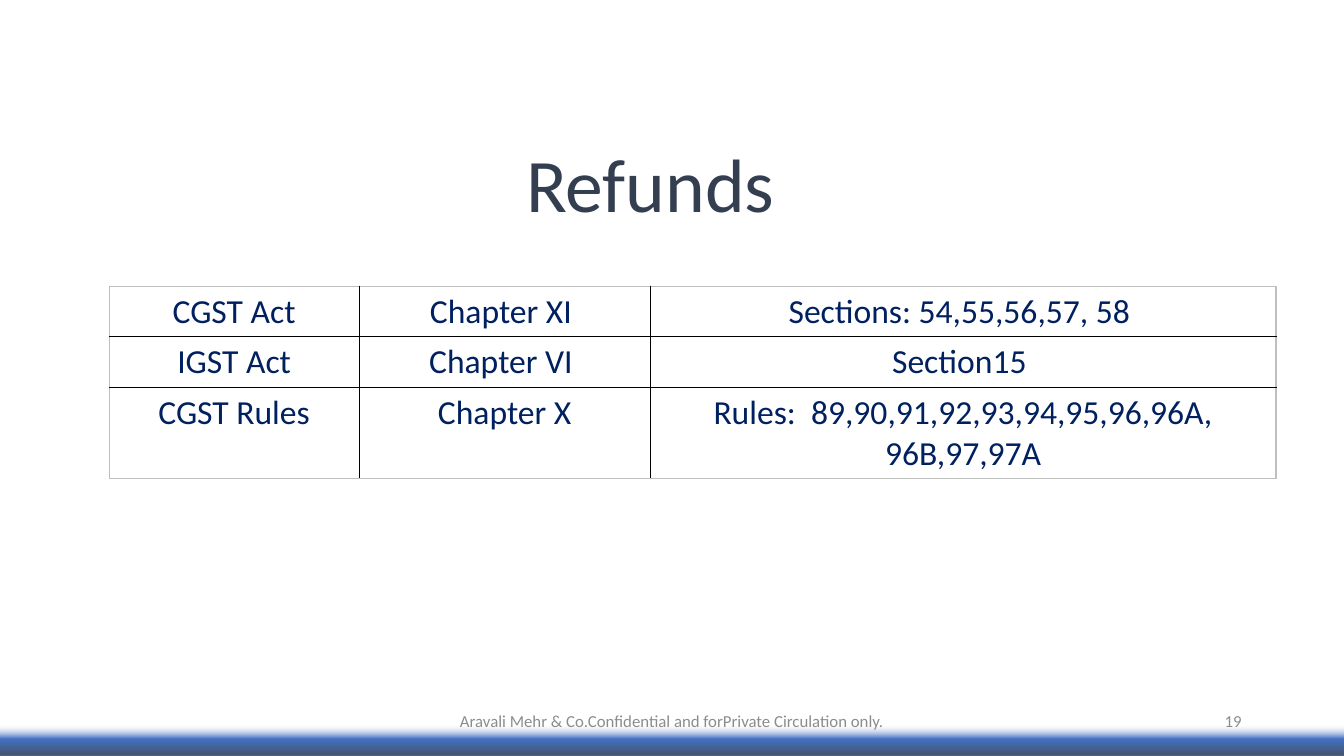
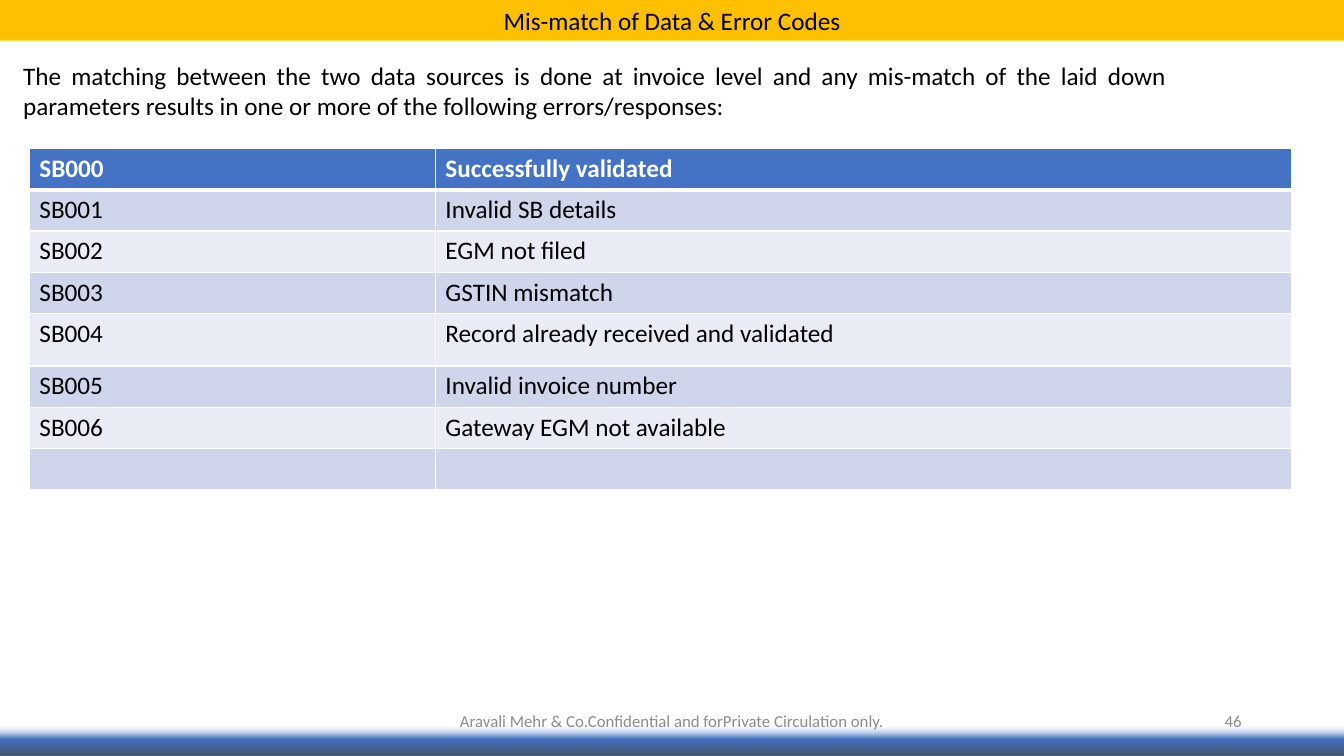
from pptx import Presentation
from pptx.dml import color
from pptx.enum import shapes, text
from pptx.oxml import ns, parse_xml
from pptx.util import Pt

PX = 6350
WIDTH, HEIGHT = 1920, 1080
FONT = "Calibri"
BLACK, WHITE, GREY = "000000", "FFFFFF", "8C8C8C"
SLATE, NAVY, AMBER = "333F50", "002060", "FFC000"
BLUE, PALE_BLUE, PALEST_BLUE = "4472C4", "CFD5EA", "E9EBF5"
OUTLINE = "BFBFBF"
BAND_STOPS = [(11, "E0E5F7", 0), (50, BLUE, 100), (100, "44546A", 100)]
FOOTER = "Aravali Mehr & Co.Confidential and forPrivate Circulation only."
ALIGN = text.PP_ALIGN
ANCHOR = text.MSO_ANCHOR

REFUND_RULES = [
    ("CGST Act", "Chapter XI ", "Sections: 54,55,56,57, 58 "),
    ("IGST Act", "Chapter VI ", "Section15 "),
    ("CGST Rules", "Chapter X", "Rules:  89,90,91,92,93,94,95,96,96A, 96B,97,97A"),
]
ERROR_CODES = [
    ("SB000", "Successfully validated"),
    ("SB001", "Invalid SB details"),
    ("SB002", "EGM not filed"),
    ("SB003", "GSTIN mismatch"),
    ("SB004", "Record already received and validated"),
    ("SB005", "Invalid invoice number"),
    ("SB006", "Gateway EGM not available"),
    ("", ""),
]


def rgb(value):
    """Return the colour for a hex string."""
    return color.RGBColor.from_string(value)


def px(*lengths):
    """Convert pixel lengths to EMU."""
    return [length * PX for length in lengths]


def write(frame, words, size, colour, align=ALIGN.LEFT, bold=False):
    """Put one styled paragraph into a text frame."""
    frame.word_wrap = True
    paragraph = frame.paragraphs[0]
    paragraph.text = words
    paragraph.alignment = align
    font = paragraph.font
    font.name, font.size, font.bold = FONT, Pt(size), bold
    font.color.rgb = rgb(colour)


def add_text(slide, box, words, size, colour, align, anchor=ANCHOR.TOP):
    """Add a text box."""
    frame = slide.shapes.add_textbox(*px(*box)).text_frame
    write(frame, words, size, colour, align)
    frame.vertical_anchor = anchor


def add_bar(slide, top, height):
    """Add a full-width bar without outline or shadow."""
    shape = slide.shapes.add_shape(
        shapes.MSO_SHAPE.RECTANGLE, *px(0, top, WIDTH, height))
    shape.shadow.inherit = False
    shape.line.fill.background()
    return shape


def add_bottom_band(slide):
    """Add the band that fades in towards the bottom edge."""
    shape = add_bar(slide, 1031, 49)
    shape.fill.background()
    stops = "".join(
        f'<a:gs pos="{place * 1000}"><a:srgbClr val="{colour}">'
        f'<a:alpha val="{opacity * 1000}"/></a:srgbClr></a:gs>'
        for place, colour, opacity in BAND_STOPS)
    gradient = parse_xml(
        f'<a:gradFill {ns.nsdecls("a")}><a:gsLst>{stops}</a:gsLst>'
        '<a:lin ang="5400000" scaled="0"/></a:gradFill>')
    properties = shape._element.spPr
    properties.replace(properties.find(ns.qn("a:noFill")), gradient)


def add_heading_bar(slide, words):
    """Add the amber heading bar at the top."""
    shape = add_bar(slide, 0, 58)
    shape.fill.solid()
    shape.fill.fore_color.rgb = rgb(AMBER)
    write(shape.text_frame, words, 18, BLACK, ALIGN.CENTER)
    shape.text_frame.vertical_anchor = ANCHOR.TOP


def add_footer(slide, number):
    """Add the footer line and the slide number."""
    add_text(slide, (636, 1001, 648, 58), FOOTER, 12, GREY,
             ALIGN.CENTER, ANCHOR.MIDDLE)
    add_text(slide, (1356, 1001, 432, 58), str(number), 12, GREY,
             ALIGN.RIGHT, ANCHOR.MIDDLE)


def set_borders(cell, borders):
    """Draw the left, right, top and bottom borders of a cell."""
    properties = cell._tc.get_or_add_tcPr()
    for side, (colour, width) in zip("LRTB", borders):
        properties.append(parse_xml(
            f'<a:ln{side} {ns.nsdecls("a")} w="{Pt(width)}"><a:solidFill>'
            f'<a:srgbClr val="{colour}"/></a:solidFill></a:ln{side}>'))


def add_table(slide, left, top, columns, heights, rows, across, down, style):
    """Add a table from its row and column rules and a style per row."""
    table = slide.shapes.add_table(
        len(heights), len(columns),
        *px(left, top, sum(columns), sum(heights))).table
    table.first_row = table.horz_banding = False
    for column, width in zip(table.columns, px(*columns)):
        column.width = width
    for r, (row, height) in enumerate(zip(table.rows, px(*heights))):
        row.height = height
        fill, *look = style(r)
        for c, cell in enumerate(row.cells):
            write(cell.text_frame, rows[r][c], *look)
            set_borders(cell, (down[c], down[c + 1], across[r], across[r + 1]))
            if fill:
                cell.fill.solid()
                cell.fill.fore_color.rgb = rgb(fill)
            else:
                cell.fill.background()


def refund_style(row):
    """Return fill, size, colour and alignment of a refund row."""
    return None, 24, NAVY, ALIGN.CENTER


def error_style(row):
    """Return fill, size, colour, alignment and weight of an error row."""
    if row == 0:
        return BLUE, 18, WHITE, ALIGN.LEFT, True
    return PALE_BLUE if row % 2 else PALEST_BLUE, 18, BLACK, ALIGN.LEFT


def add_slide(presentation):
    """Add a blank slide with the bottom band."""
    slide = presentation.slides.add_slide(presentation.slide_layouts[6])
    add_bottom_band(slide)
    return slide


def build_refunds(presentation):
    """Build the refunds slide."""
    slide = add_slide(presentation)
    add_text(slide, (575, 189, 708, 145), "Refunds", 54, SLATE, ALIGN.CENTER)
    edge, inner = (OUTLINE, 1), (BLACK, 1)
    rules = [edge, inner, inner, edge]
    add_table(slide, 156, 409, [357, 416, 894], [72, 72, 130],
              REFUND_RULES, rules, rules, refund_style)
    add_footer(slide, 19)


def build_error_codes(presentation):
    """Build the error codes slide."""
    slide = add_slide(presentation)
    add_heading_bar(slide, "Mis-match of Data & Error Codes")
    add_text(slide, (19, 79, 1662, 102),
             "The matching between the two data sources is done at invoice "
             "level and any mis-match of the laid down parameters results in "
             "one or more of the following errors/responses:",
             18, BLACK, ALIGN.JUSTIFY)
    thin, thick = (WHITE, 1), (WHITE, 3)
    add_table(slide, 42, 212, [580, 1223], [59] * 4 + [75] + [59] * 3,
              ERROR_CODES, [thin, thick] + [thin] * 7, [thin] * 3, error_style)
    add_footer(slide, 46)


def main():
    """Build and save the presentation."""
    presentation = Presentation()
    presentation.slide_width, presentation.slide_height = px(WIDTH, HEIGHT)
    build_refunds(presentation)
    build_error_codes(presentation)
    presentation.save("out.pptx")


if __name__ == "__main__":
    main()
